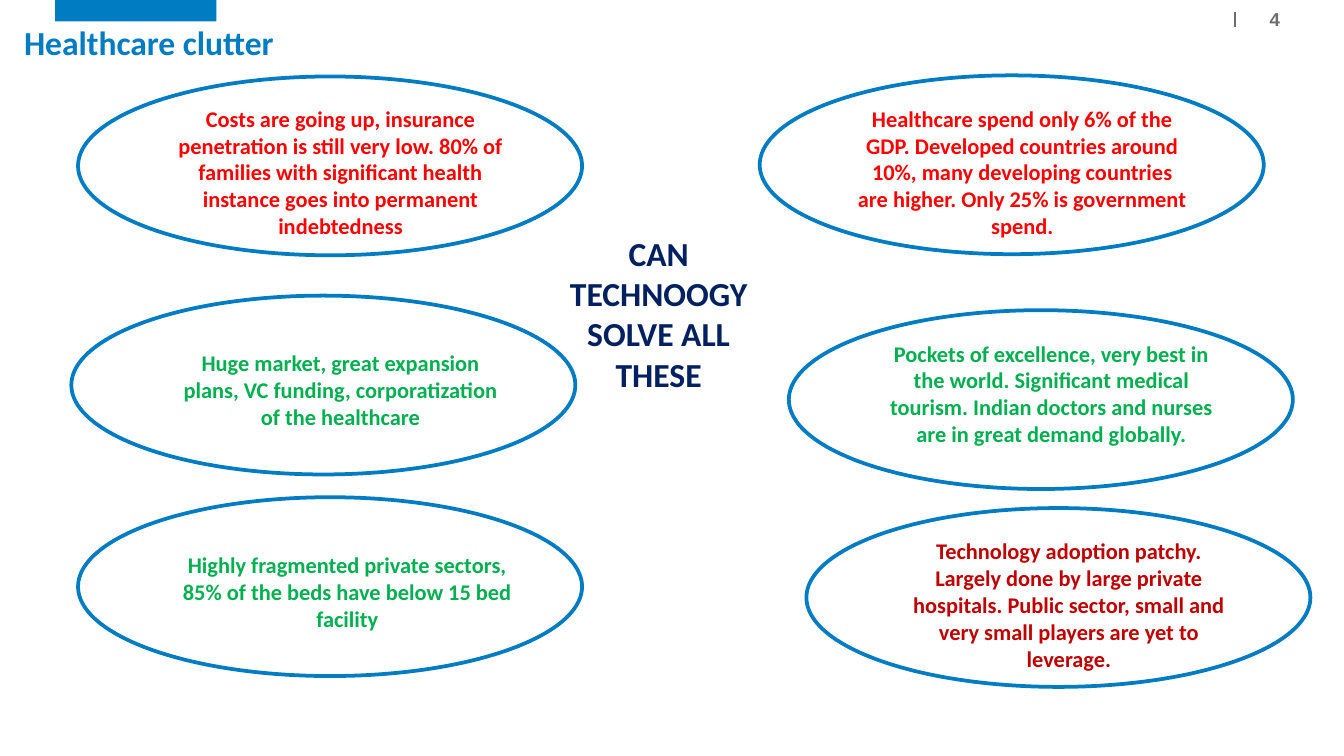
from pptx import Presentation
from pptx.dml.color import RGBColor
from pptx.enum.shapes import MSO_CONNECTOR, MSO_SHAPE
from pptx.enum.text import MSO_ANCHOR, PP_ALIGN
from pptx.oxml.ns import qn
from pptx.util import Pt
from lxml.etree import SubElement

BLUE = RGBColor(0x00, 0x7C, 0xC3)
NAVY = RGBColor(0x00, 0x20, 0x60)
GRAY = RGBColor(0x6D, 0x6E, 0x71)
RED = RGBColor(0xFF, 0x00, 0x00)
GREEN = RGBColor(0x00, 0xB0, 0x50)
DARK = RGBColor(0xC0, 0x00, 0x00)

WIDE, HIGH = 270, 95.8
TEXT_WIDE = 192.2

ISSUES = [
    (41.8, 41, 44.6, 11.6, 80, RED,
     "Costs are going up, insurance penetration is still very low. 80% of families "
     "with significant health instance goes into permanent indebtedness"),
    (38.2, 158.4, 48.2, 25.2, 51, GREEN,
     "Huge market, great expansion plans, VC funding, corporatization of the healthcare"),
    (41.8, 266.4, 48.2, 25.2, 51, GREEN,
     "Highly fragmented private sectors, 85% of the beds have below 15 bed facility"),
    (407, 40.4, 44.6, 12.2, 80, RED,
     "Healthcare spend only 6% of the GDP. Developed countries around 10%, many "
     "developing countries are higher. Only 25% is government spend."),
    (422.6, 166.2, 44.6, 12.2, 65.5, GREEN,
     "Pockets of excellence, very best in the world. Significant medical tourism. "
     "Indian doctors and nurses are in great demand globally."),
    (432, 272.2, 44.6, 12.2, 80, DARK,
     "Technology adoption patchy. Largely done by large private hospitals. Public "
     "sector, small and very small players are yet to leverage."),
]


def write(frame, text, size=12, color=BLUE, face="Calibri", align=PP_ALIGN.CENTER, space=1):
    para = frame.paragraphs[0]
    para.alignment = align
    para.line_spacing = space
    run = para.add_run()
    run.text = text
    run.font.name = face
    run.font.size = Pt(size)
    run.font.bold = True
    run.font.color.rgb = color


class Deck:
    def __init__(self, wide, high):
        self.file = Presentation()
        self.file.slide_width = Pt(wide)
        self.file.slide_height = Pt(high)
        self.slide = self.file.slides.add_slide(self.file.slide_layouts[6])
        self.main = BLUE

    def shape(self, kind, *box):
        shape = self.slide.shapes.add_shape(kind, *map(Pt, box))
        shape.shadow.inherit = False
        return shape

    def bar(self, *box):
        bar = self.shape(MSO_SHAPE.RECTANGLE, *box)
        bar.fill.solid()
        bar.fill.fore_color.rgb = self.main
        bar.line.fill.background()

    def oval(self, *box):
        oval = self.shape(MSO_SHAPE.OVAL, *box)
        oval.fill.background()
        oval.line.color.rgb = self.main
        oval.line.width = Pt(2)

    def line(self, *ends):
        line = self.slide.shapes.add_connector(MSO_CONNECTOR.STRAIGHT, *map(Pt, ends))
        line.line.color.rgb = GRAY
        line.line.width = Pt(1)
        SubElement(line._element.spPr, qn("a:effectLst"))

    def text(self, text, *box, anchor=MSO_ANCHOR.TOP, wrap=True, inset=None, **style):
        frame = self.slide.shapes.add_textbox(*map(Pt, box)).text_frame
        frame.word_wrap = wrap
        frame.vertical_anchor = anchor
        if inset is not None:
            frame.margin_left = frame.margin_right = Pt(inset)
            frame.margin_top = frame.margin_bottom = Pt(inset)
        write(frame, text, **style)

    def issue(self, left, top, right, down, high, color, text):
        self.oval(left, top, WIDE, HIGH)
        self.text(text, left + right, top + down, TEXT_WIDE, high, color=color)


def main():
    deck = Deck(720, 405)
    deck.bar(29.5, 0, 86.4, 11.5)
    deck.line(661.7, 6.5, 661.7, 14.4)
    deck.text("Healthcare clutter", 5.8, 11.5, 684, 25.9, size=18,
              anchor=MSO_ANCHOR.BOTTOM, align=PP_ALIGN.LEFT, space=0.9)
    deck.text("4", 675.4, 2.9, 15.1, 15.1, size=10, color=GRAY, face="Arial",
              anchor=MSO_ANCHOR.MIDDLE, wrap=False, inset=1.44)
    for issue in ISSUES:
        deck.issue(*issue)
    deck.text("CAN TECHNOOGY SOLVE ALL THESE", 286.6, 121, 132.5, 94.3,
              size=18, color=NAVY)
    deck.file.save("out.pptx")


if __name__ == "__main__":
    main()
